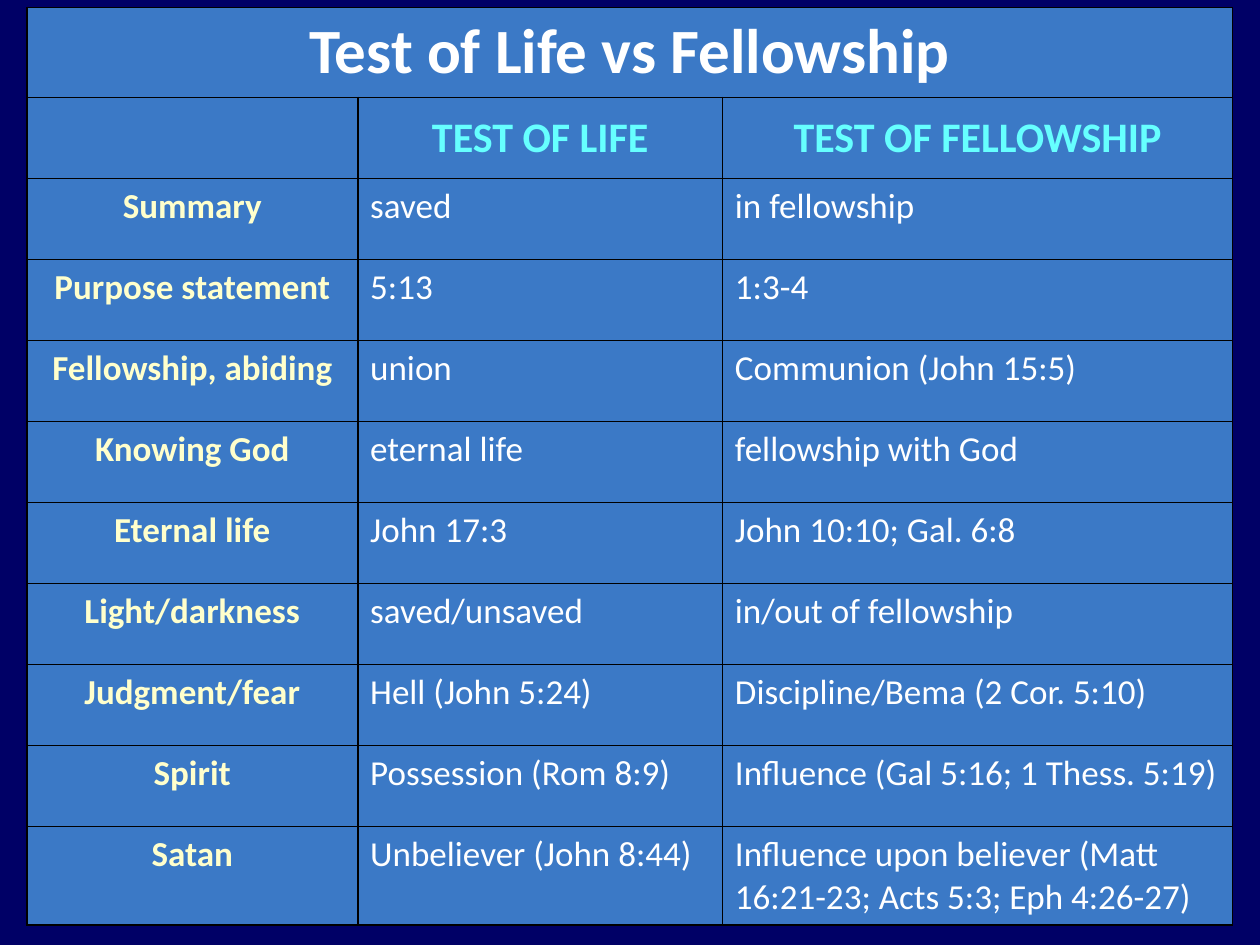
from lxml import etree
from pptx import Presentation
from pptx.dml.color import RGBColor
from pptx.enum.text import MSO_ANCHOR, PP_ALIGN
from pptx.oxml.ns import qn
from pptx.util import Cm, Pt

CENTER, LEFT = PP_ALIGN.CENTER, PP_ALIGN.LEFT
TOP, MIDDLE = MSO_ANCHOR.TOP, MSO_ANCHOR.MIDDLE

NAVY, BLUE, BLACK = "000066", "3B79C6", "000000"
WHITE, CYAN, CREAM = "FFFFFF", "66FFFF", "FFFFCC"

TITLE = "Test of Life vs Fellowship"
HEADINGS = ["", "TEST OF LIFE", "TEST OF FELLOWSHIP"]
COMPARISONS = [
    ("Summary", "saved", "in fellowship"),
    ("Purpose statement", "5:13", "1:3-4"),
    ("Fellowship, abiding", "union", "Communion (John 15:5)"),
    ("Knowing God", "eternal life", "fellowship with God"),
    ("Eternal life", "John 17:3", "John 10:10; Gal. 6:8"),
    ("Light/darkness", "saved/unsaved", "in/out of fellowship"),
    ("Judgment/fear", "Hell (John 5:24)", "Discipline/Bema (2 Cor. 5:10)"),
    ("Spirit", "Possession (Rom 8:9)", "Influence (Gal 5:16; 1 Thess. 5:19)"),
    ("Satan", "Unbeliever (John 8:44)",
     "Influence upon believer (Matt 16:21-23; Acts 5:3; Eph 4:26-27)"),
]
COLUMN_SHARES = [0.2745, 0.3025, 0.423]
TITLE_HEIGHT, LAST_HEIGHT = 1.81, 1.96


def color(value):
    return RGBColor.from_string(value)


def style_cell(cell):
    properties = cell._tc.get_or_add_tcPr()
    for side in ("a:lnL", "a:lnR", "a:lnT", "a:lnB"):
        border = etree.SubElement(properties, qn(side), w=str(Pt(1)))
        border_fill = etree.SubElement(border, qn("a:solidFill"))
        etree.SubElement(border_fill, qn("a:srgbClr"), val=BLACK)
    cell.fill.solid()
    cell.fill.fore_color.rgb = color(BLUE)
    cell.margin_left = cell.margin_right = Cm(0.25)
    cell.margin_top = cell.margin_bottom = Cm(0.13)


def write_cell(cell, text, size, ink, bold=True, align=CENTER, anchor=TOP):
    cell.vertical_anchor = anchor
    paragraph = cell.text_frame.paragraphs[0]
    paragraph.alignment = align
    if not text:
        return
    run = paragraph.add_run()
    run.text = text
    run.font.name = "Calibri"
    run.font.size = Pt(size)
    run.font.bold = bold
    run.font.color.rgb = color(ink)


def add_comparison_table(slide, left, top, width, height):
    row_count = len(COMPARISONS) + 2
    table = slide.shapes.add_table(
        row_count, len(HEADINGS), Cm(left), Cm(top), Cm(width), Cm(height)).table
    table.first_row = table.horz_banding = False
    for column, share in zip(table.columns, COLUMN_SHARES):
        column.width = Cm(width * share)
    middle_height = (height - TITLE_HEIGHT - LAST_HEIGHT) / (row_count - 2)
    heights = [TITLE_HEIGHT] + [middle_height] * (row_count - 2) + [LAST_HEIGHT]
    for row, row_height in zip(table.rows, heights):
        row.height = Cm(row_height)
    for cell in table.iter_cells():
        style_cell(cell)

    table.cell(0, 0).merge(table.cell(0, len(HEADINGS) - 1))
    write_cell(table.cell(0, 0), TITLE, 36, WHITE)
    for index, heading in enumerate(HEADINGS):
        write_cell(table.cell(1, index), heading, 24, CYAN, anchor=MIDDLE)
    for row_index, (topic, *tests) in enumerate(COMPARISONS, start=2):
        write_cell(table.cell(row_index, 0), topic, 20, CREAM)
        for index, test in enumerate(tests, start=1):
            write_cell(table.cell(row_index, index), test, 20, WHITE, False, LEFT)


def main():
    deck = Presentation()
    deck.slide_width, deck.slide_height = Cm(25.4), Cm(19.05)
    slide = deck.slides.add_slide(deck.slide_layouts[6])
    slide.background.fill.solid()
    slide.background.fill.fore_color.rgb = color(NAVY)
    add_comparison_table(slide, 0.54, 0.15, 24.31, 18.47)
    deck.save("out.pptx")


if __name__ == "__main__":
    main()
